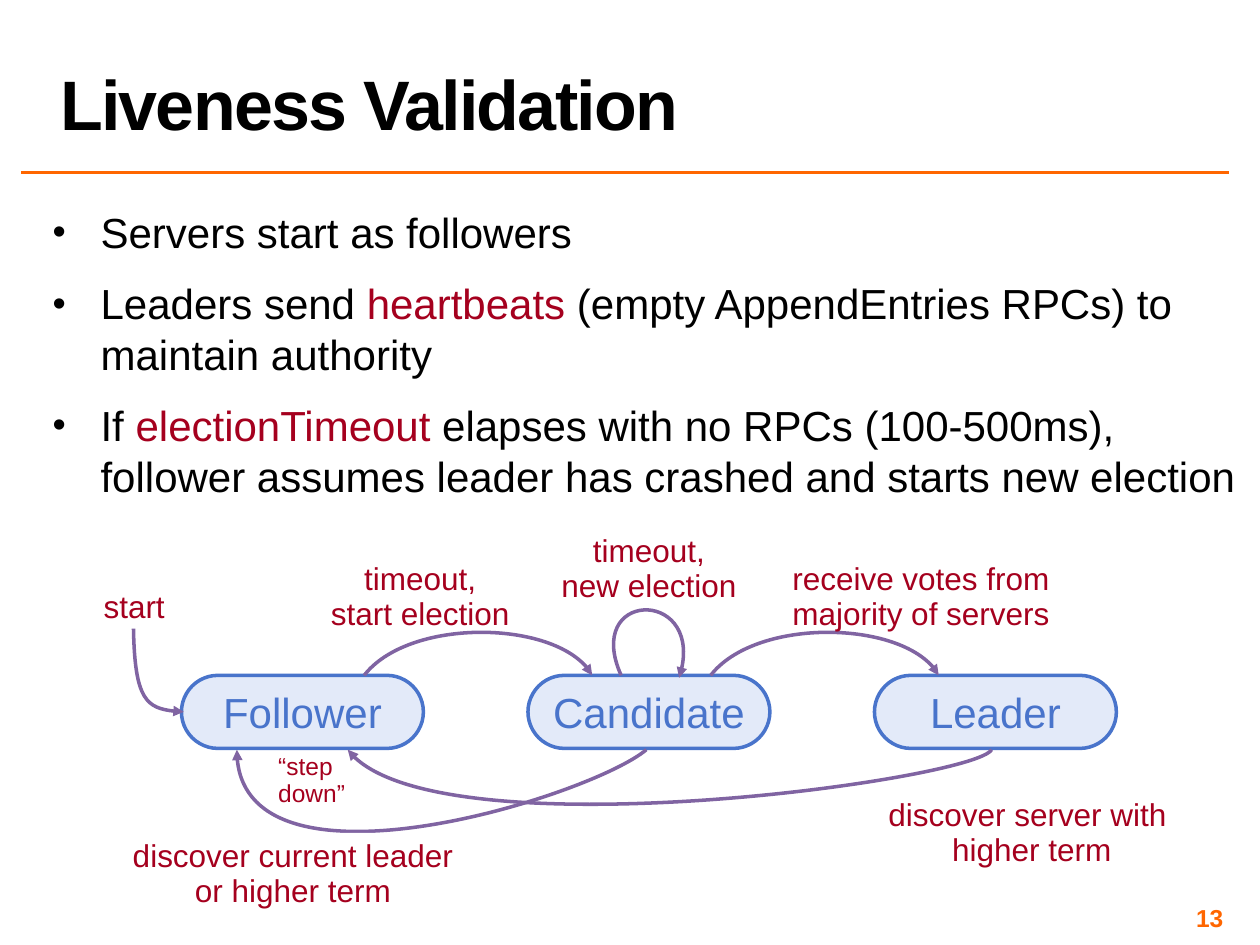
from lxml import etree
from pptx import Presentation
from pptx.dml.color import RGBColor
from pptx.enum.shapes import MSO_CONNECTOR, MSO_SHAPE
from pptx.enum.text import MSO_ANCHOR, MSO_AUTO_SIZE, PP_ALIGN
from pptx.oxml.ns import qn
from pptx.util import Inches, Pt

STRAIGHT = MSO_CONNECTOR.STRAIGHT
ROUNDED = MSO_SHAPE.ROUNDED_RECTANGLE
MIDDLE, BOTTOM = MSO_ANCHOR.MIDDLE, MSO_ANCHOR.BOTTOM
LEFT, CENTER, RIGHT = PP_ALIGN.LEFT, PP_ALIGN.CENTER, PP_ALIGN.RIGHT
FIT = MSO_AUTO_SIZE.SHAPE_TO_FIT_TEXT

COLORS = {"black": "000000", "white": "FFFFFF", "orange": "FF6600", "red": "A5001E",
          "blue": "4974CB", "pale": "E3EAF9", "purple": "8064A2"}
COLUMNS, ROWS = 100, 75
CELL = Inches(0.1)
NODE_LEFT, NODE_TOP, NODE_STEP = 14.4, 53.6, 27.5
NODE_SIZE = (19.2, 5.8)

NODES = ["Follower", "Candidate", "Leader"]
BULLETS = [
    [("Servers start as followers", "black")],
    [("Leaders send ", "black"), ("heartbeats", "red"),
     (" (empty AppendEntries RPCs) to maintain authority", "black")],
    [("If ", "black"), ("electionTimeout ", "red"),
     ("elapses with no RPCs (100-500ms), follower assumes leader has crashed "
      "and starts new election", "black")],
]
HOP = [(28.9, 53.6), (32.4, 49.1), (44.6, 49.2), (47, 53.6)]
CURVES = [
    [(10.6, 49.9), (10.7, 55.6), (11.9, 56.4), (14.6, 56.5)],
    HOP,
    [(x + NODE_STEP, y) for x, y in HOP],
    [(49.3, 53.6), (46.3, 46.9), (56.2, 46.6), (53.9, 53.8)],
    [(51.3, 59.5), (46.9, 63.2), (18.7, 72), (18.8, 59.5)],
    [(78.7, 59.5), (77.4, 61.9), (33.9, 67.9), (27.6, 59.5)],
]
LABELS = [
    ("start", (7.2, 46.1, 6.9, 4), None),
    ("timeout,\nstart election", (25.2, 44.1, 16.3, 6.6), 20),
    ("receive votes from\nmajority of servers", (61.8, 44.1, 22.6, 6.6), 20),
    ("timeout,\nnew election", (43.5, 41.9, 16, 6.6), 20),
    ("discover server with\n higher term", (69.4, 62.8, 24.3, 6.6), 20),
    ("discover current leader\nor higher term", (9.4, 66.1, 27.7, 6.6), 20),
]


def cells(*values):
    return [round(v * CELL) for v in values]


def rgb(name):
    return RGBColor.from_string(COLORS[name])


def apply(target, values):
    for name, value in values.items():
        setattr(target, name, value)


def paint(sp, fill=None, line=None):
    if fill:
        sp.fill.solid()
        sp.fill.fore_color.rgb = rgb(fill)
    else:
        sp.fill.background()
    if line:
        sp.line.color.rgb = rgb(line)
        sp.line.width = Pt(2)
    else:
        sp.line.fill.background()


def write(p, parts, size, bold=False, **layout):
    apply(p, layout)
    for text, color in parts:
        for i, piece in enumerate(text.split("\n")):
            if i:
                p.add_line_break()
            r = p.add_run()
            r.text = piece
            apply(r.font, {"name": "Arial", "size": Pt(size), "bold": bold})
            r.font.color.rgb = rgb(color)


def add_text(s, box, text, size, color, frame, bold=False, **layout):
    sp = s.shapes.add_textbox(*cells(*box))
    apply(sp.text_frame, frame)
    write(sp.text_frame.paragraphs[0], [(text, color)], size, bold, **layout)
    return sp


def add_label(s, text, box, spacing, size=18, align=CENTER):
    layout = {"alignment": align}
    if spacing:
        layout["line_spacing"] = Pt(spacing)
    return add_text(s, box, text, size, "red", {"word_wrap": False, "auto_size": FIT}, **layout)


def add_rule(s):
    c = s.shapes.add_connector(STRAIGHT, *cells(1.7, 13.7, COLUMNS - 2.5, 13.7))
    c.line.color.rgb = rgb("orange")
    c.line.width = Pt(2)
    etree.SubElement(c._element.spPr, qn("a:effectLst"))


def add_node(s, index, text):
    sp = s.shapes.add_shape(ROUNDED, *cells(NODE_LEFT + index * NODE_STEP, NODE_TOP, *NODE_SIZE))
    sp.adjustments[0] = 0.5
    sp.shadow.inherit = False
    paint(sp, "pale", "blue")
    apply(sp.text_frame, {"vertical_anchor": MIDDLE, "word_wrap": True})
    write(sp.text_frame.paragraphs[0], [(text, "blue")], 24, alignment=CENTER)


def bezier(points, t):
    weights = ((1 - t) ** 3, 3 * t * (1 - t) ** 2, 3 * t * t * (1 - t), t ** 3)
    return tuple(sum(w * pt[axis] for w, pt in zip(weights, points)) for axis in (0, 1))


def add_curve(s, points):
    points = [cells(*pt) for pt in points]
    samples = [bezier(points, i / 40) for i in range(41)]
    builder = s.shapes.build_freeform(*samples[0])
    builder.add_line_segments(samples[1:], close=False)
    sp = builder.convert_to_shape()
    sp.shadow.inherit = False
    paint(sp, line="purple")
    outline = sp._element.spPr.find(".//" + qn("a:path"))
    for child in list(outline):
        outline.remove(child)
    for tag, group in (("a:moveTo", points[:1]), ("a:cubicBezTo", points[1:])):
        step = etree.SubElement(outline, qn(tag))
        for x, y in group:
            etree.SubElement(step, qn("a:pt"), x=str(x - sp.left), y=str(y - sp.top))
    etree.SubElement(sp.line._get_or_add_ln(), qn("a:tailEnd"), type="triangle")


def add_bullets(s):
    sp = s.shapes.add_textbox(*cells(3.2, 15.9, COLUMNS - 3.2, 25.3))
    tf = sp.text_frame
    tf.word_wrap = True
    for i, parts in enumerate(BULLETS):
        p = tf.add_paragraph() if i else tf.paragraphs[0]
        write(p, parts, 24, space_before=Pt(12))
        pPr = p._p.get_or_add_pPr()
        indent = Inches(0.38)
        pPr.set("marL", str(indent))
        pPr.set("indent", str(-indent))
        color = etree.SubElement(pPr, qn("a:buClr"))
        etree.SubElement(color, qn("a:srgbClr"), val=COLORS["black"])
        etree.SubElement(pPr, qn("a:buSzPct"), val="90000")
        etree.SubElement(pPr, qn("a:buFont"), typeface="Arial")
        etree.SubElement(pPr, qn("a:buChar"), char="•")


def add_heading(s):
    title = add_text(s, (3.8, 0.2, 93.7, 11.7), "Liveness Validation", 40, "black",
                     {"word_wrap": True, "vertical_anchor": BOTTOM}, True, line_spacing=0.8)
    r = title.text_frame.paragraphs[0].runs[0]
    r.font._element.set("spc", "-100")


def add_page_number(s):
    inset = Inches(0.04)
    frame = {f"margin_{side}": inset for side in ("left", "top", "right", "bottom")}
    frame.update(word_wrap=True, vertical_anchor=MIDDLE)
    add_text(s, (74.2, 71.7, 23.3, 2.3), "13", 14, "orange", frame, True, alignment=RIGHT)


def main():
    prs = Presentation()
    prs.slide_width, prs.slide_height = COLUMNS * CELL, ROWS * CELL
    s = prs.slides.add_slide(prs.slide_layouts[6])
    add_rule(s)
    add_page_number(s)
    add_heading(s)
    for i, text in enumerate(NODES):
        add_node(s, i, text)
    for points in CURVES:
        add_curve(s, points)
    for text, box, spacing in LABELS:
        sp = add_label(s, text, box, spacing)
    paint(sp, "white")
    add_label(s, "“step\ndown”", (21.1, 59.4, 7.3, 5.2), 15, 14, LEFT)
    add_bullets(s)
    prs.save("out.pptx")


if __name__ == "__main__":
    main()
